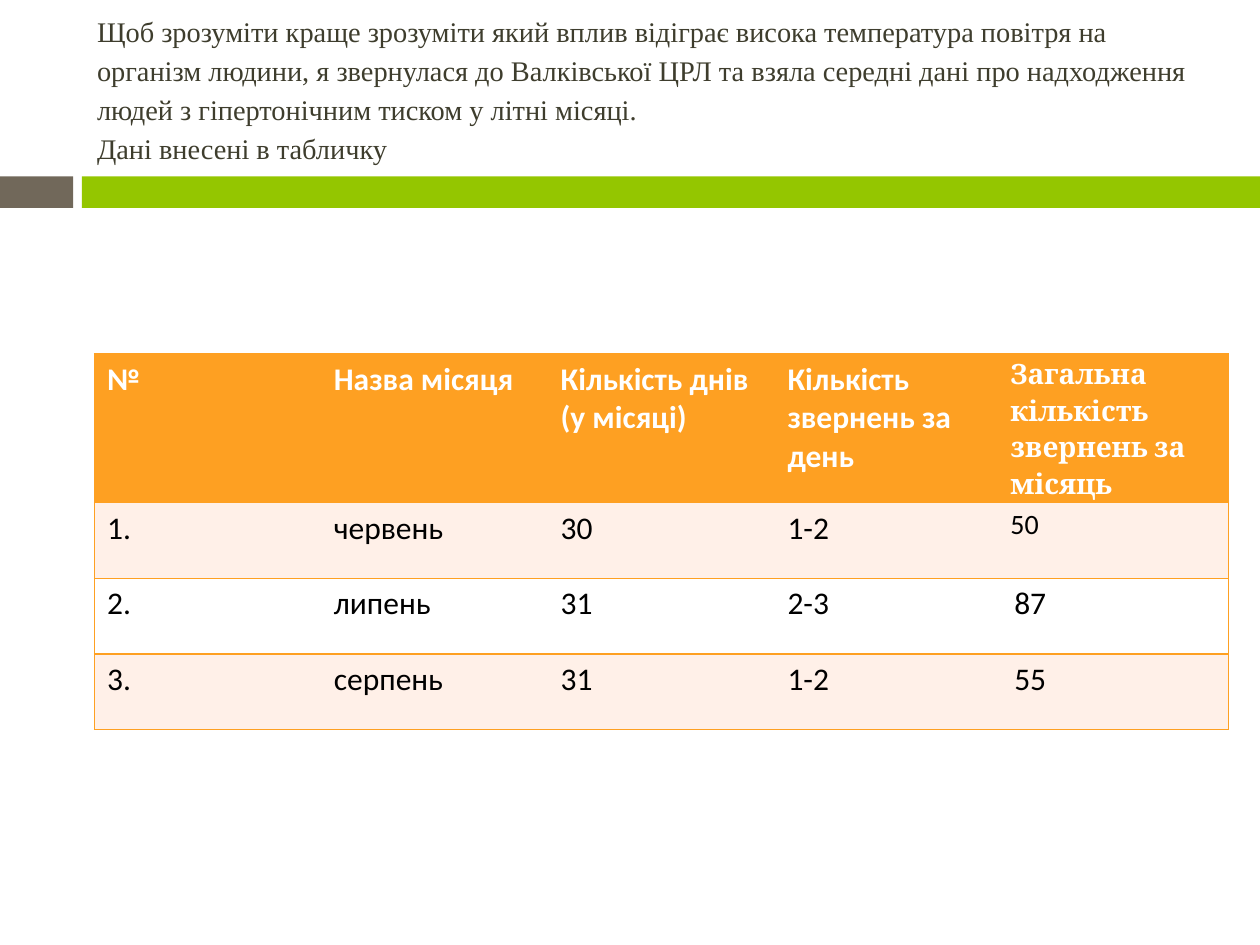
from dataclasses import dataclass

from lxml import etree
from pptx import Presentation
from pptx import util as u
from pptx.dml.color import RGBColor
from pptx.enum import shapes, text
from pptx.oxml.ns import qn


@dataclass(frozen=True)
class Theme:
    """Colours, fonts and type sizes of the slide."""
    taupe: str = "71685A"
    green: str = "94C600"
    orange: str = "FEA022"
    tint: str = "FFF0E8"
    white: str = "FFFFFF"
    black: str = "000000"
    ink: str = "3E3D2D"
    title_font: str = "Times New Roman"
    table_font: str = "Calibri"
    accent_font: str = "Cambria"
    title_size: float = 16.2
    table_size: float = 18
    accent_size: float = 16


T = Theme()
W, H = 10, 7.5
TITLE = (
    "Щоб зрозуміти краще зрозуміти який вплив відіграє висока температура повітря на "
    "організм людини, я звернулася до Валківської ЦРЛ та взяла середні дані про "
    "надходження людей з гіпертонічним тиском у літні місяці.\vДані внесені в табличку"
)
ROWS = [
    ["№", "Назва місяця", "Кількість днів (у місяці)", "Кількість звернень за день",
     "Загальна кількість звернень за місяць"],
    ["1.", "червень", "30", "1-2", "50"],
    ["2.", "липень", "31", "2-3", "87"],
    ["3.", "серпень", "31", "1-2", "55"],
]


def write(tf, content, font, size, color, bold=False, spacing=1.0):
    """Put one formatted left-aligned paragraph into a text frame."""
    tf.word_wrap = True
    p = tf.paragraphs[0]
    p.text = content
    p.alignment = text.PP_ALIGN.LEFT
    p.line_spacing = spacing
    for r in p.runs:
        r.font.name, r.font.size, r.font.bold = font, u.Pt(size), bold
        r.font.color.rgb = RGBColor.from_string(color)


def add_band(s, box):
    """Draw the two-part band, split at 6.5 % of its width."""
    x, y, w, h = box
    for start, end, color in ((0, 0.058, T.taupe), (0.065, 1, T.green)):
        sp = s.shapes.add_shape(
            shapes.MSO_SHAPE.RECTANGLE, u.Inches(x + start * w), u.Inches(y),
            u.Inches((end - start) * w), u.Inches(h))
        sp.shadow.inherit = False
        sp.fill.solid()
        sp.fill.fore_color.rgb = RGBColor.from_string(color)
        sp.line.fill.background()


def add_title(s, box):
    """Place the introduction in the title placeholder."""
    sp = s.shapes.title
    sp.left, sp.top, sp.width, sp.height = map(u.Inches, box)
    tf = sp.text_frame
    tf.auto_size = text.MSO_AUTO_SIZE.NONE
    tf.vertical_anchor = text.MSO_ANCHOR.MIDDLE
    tf.margin_bottom = u.Inches(0.25)
    write(tf, TITLE, T.title_font, T.title_size, T.ink, spacing=1.15)


def set_borders(cell, sides):
    """Draw the named sides of a cell and hide the others."""
    pr = cell._tc.get_or_add_tcPr()
    for i, side in enumerate("LRTB"):
        ln = etree.Element(qn(f"a:ln{side}"), w=str(u.Pt(1)))
        if side in sides:
            fill = etree.SubElement(ln, qn("a:solidFill"))
            etree.SubElement(fill, qn("a:srgbClr"), val=T.orange)
        else:
            etree.SubElement(ln, qn("a:noFill"))
        pr.insert(i, ln)


def add_data_table(s, box, head_height):
    """Build the table with equal columns and equal body rows."""
    n, m = len(ROWS), len(ROWS[0])
    tbl = s.shapes.add_table(n, m, *map(u.Inches, box)).table
    body_height = (box[3] - head_height) / (n - 1)
    for i, row in enumerate(ROWS):
        head = i == 0
        tbl.rows[i].height = u.Inches(head_height if head else body_height)
        for j, value in enumerate(row):
            cell = tbl.cell(i, j)
            last = j == m - 1
            tight = last and i < 2
            accent = head and last
            cell.fill.solid()
            cell.fill.fore_color.rgb = RGBColor.from_string(
                T.orange if head else T.tint if i % 2 else T.white)
            if tight:
                cell.margin_left = cell.margin_right = u.Inches(0.07)
                cell.margin_top = cell.margin_bottom = 0
            write(cell.text_frame, value,
                  T.accent_font if accent else T.table_font,
                  T.accent_size if accent or (tight and not head) else T.table_size,
                  T.white if head else T.black, head, 1.15 if tight else 1.0)
            set_borders(cell, "TB" + "L" * (j == 0) + "R" * last)


def main():
    """Build and save the slide."""
    prs = Presentation()
    prs.slide_width, prs.slide_height = u.Inches(W), u.Inches(H)
    s = prs.slides.add_slide(prs.slide_layouts[5])
    add_band(s, (0, 1.4, W, 0.25))
    add_title(s, (0.67, 0.25, 8.92, 1.08))
    add_data_table(s, (0.75, 2.81, 0.9 * W, 2.98), 1.18)
    prs.save("out.pptx")


if __name__ == "__main__":
    main()
